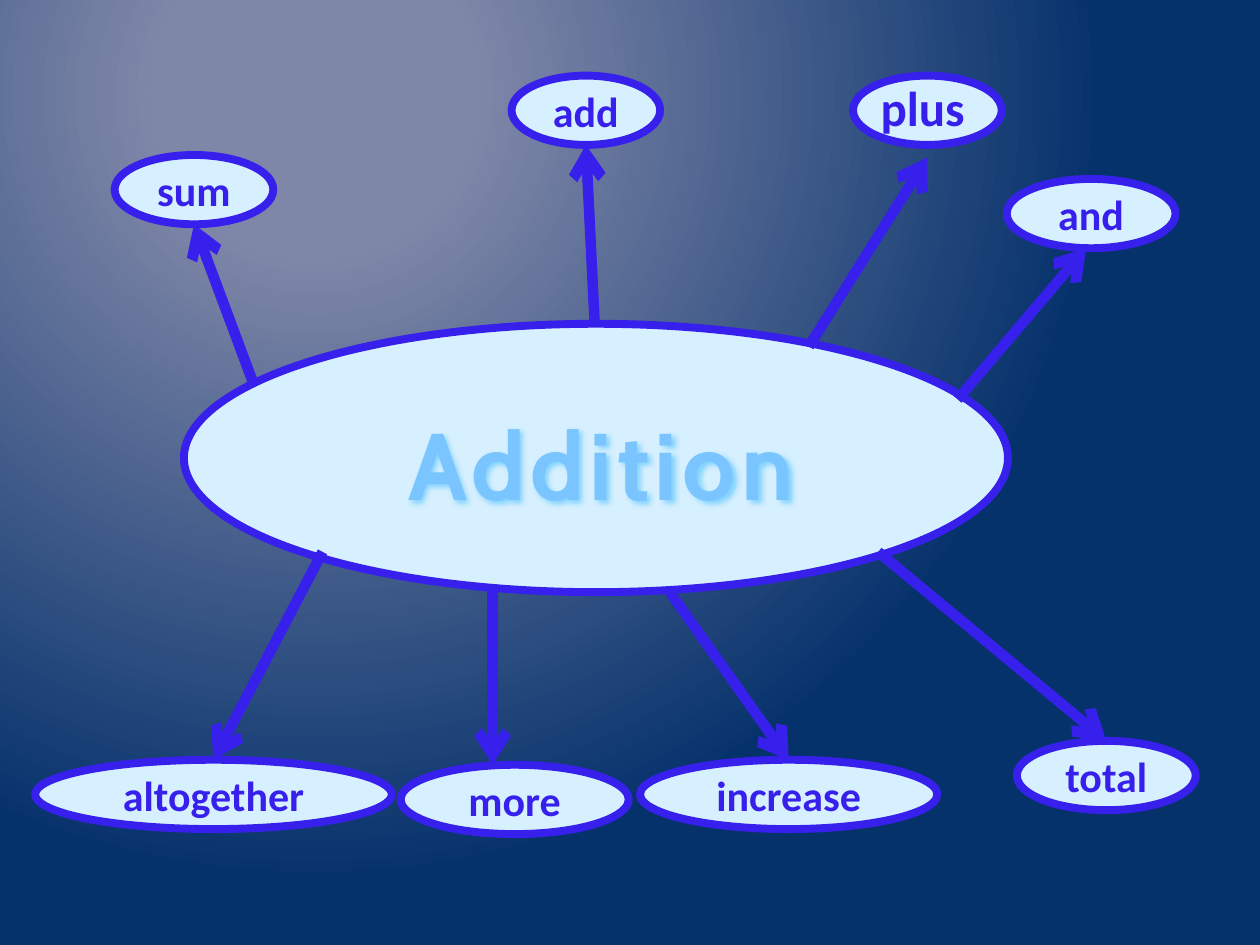
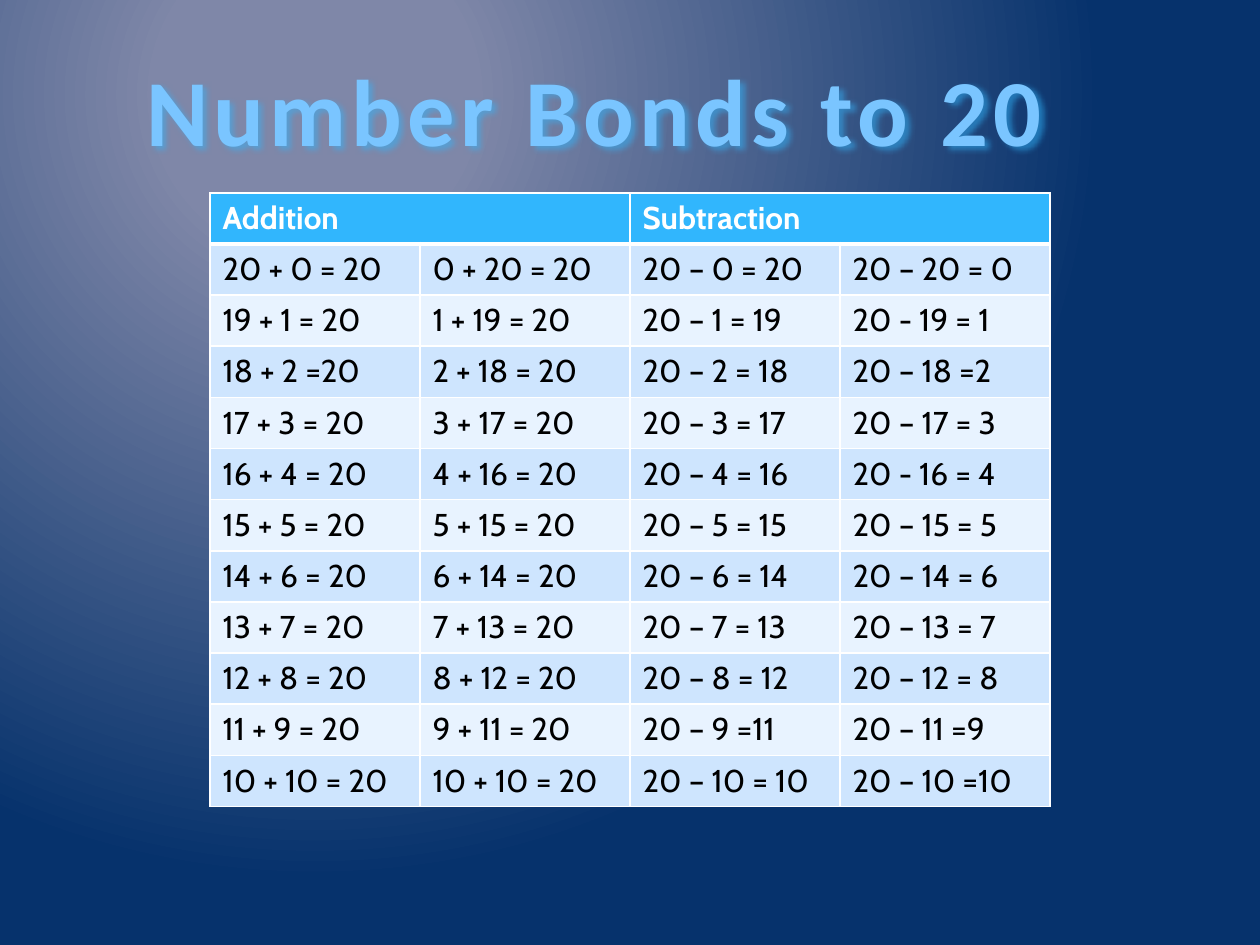
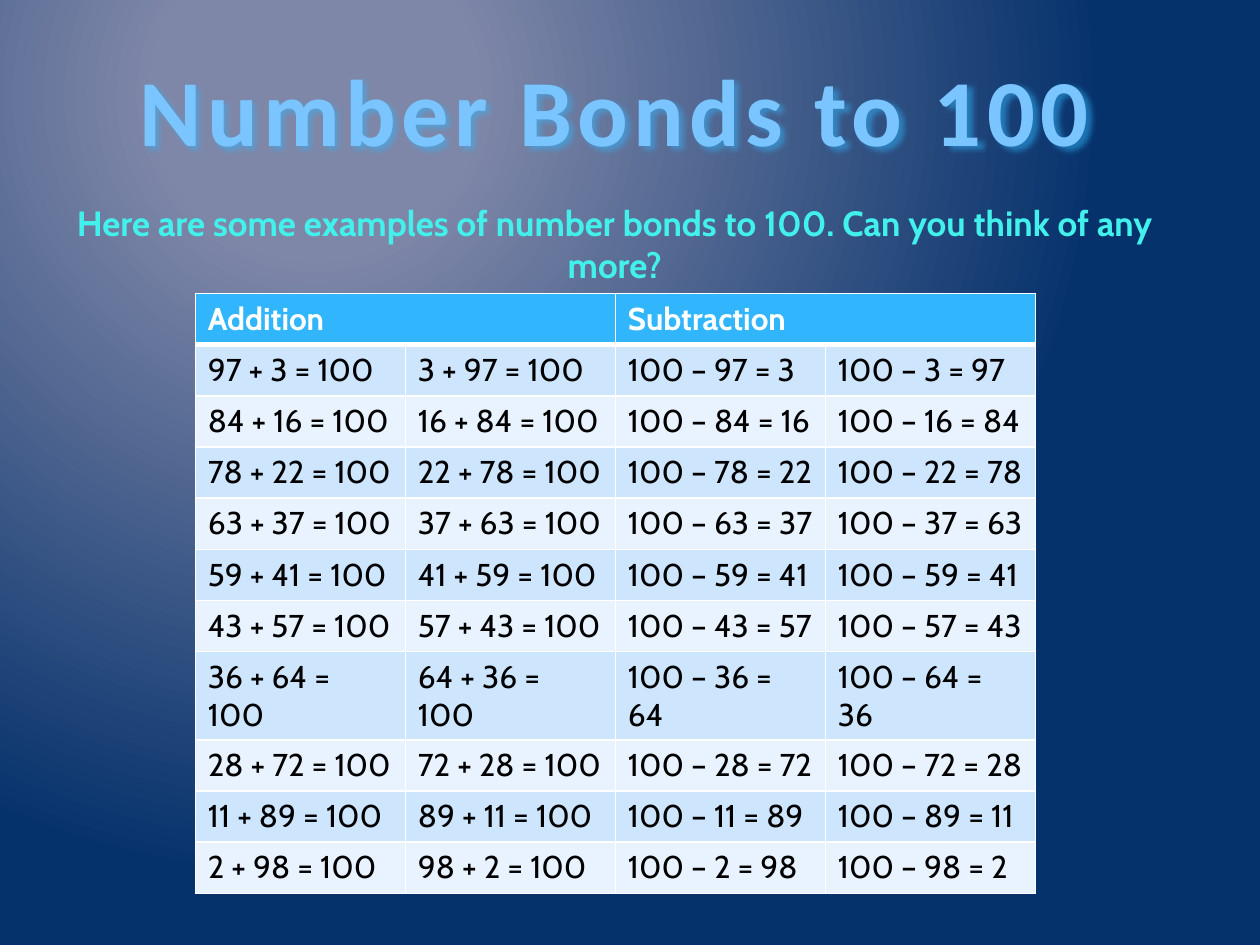
from dataclasses import dataclass
from typing import NamedTuple

from lxml.etree import SubElement
from pptx import Presentation
from pptx.dml.color import RGBColor
from pptx.enum.shapes import MSO_CONNECTOR as Connector
from pptx.enum.shapes import MSO_SHAPE as Preset
from pptx.enum.text import MSO_ANCHOR as Anchor
from pptx.enum.text import MSO_AUTO_SIZE as AutoSize
from pptx.enum.text import PP_ALIGN as Align
from pptx.oxml.ns import qn
from pptx.util import Inches, Pt

SLIDE_WIDTH, SLIDE_HEIGHT = Inches(10), Inches(7.5)
GRID_COLUMNS, GRID_ROWS = 100, 75

VIOLET = RGBColor(0x38, 0x20, 0xEC)
PALE_BLUE = RGBColor(0xD6, 0xF0, 0xFF)
WHITE = RGBColor(0xFF, 0xFF, 0xFF)
BLACK = RGBColor(0x00, 0x00, 0x00)
HEADER_BLUE = RGBColor(0x31, 0xB6, 0xFD)
BAND_DARK = RGBColor(0xCE, 0xE5, 0xFE)
BAND_LIGHT = RGBColor(0xE8, 0xF3, 0xFF)
HAZE = RGBColor(0x7F, 0x87, 0xA8)
NAVY = RGBColor(0x06, 0x32, 0x6C)
SKY = RGBColor(0x7A, 0xC5, 0xFF)
AZURE = RGBColor(0x00, 0x92, 0xDF)
HUB_OUTLINE = RGBColor(0x05, 0x2E, 0x65)
TITLE_OUTLINE = RGBColor(0x07, 0x3E, 0x87)
AQUA_PALE = RGBColor(0x50, 0xF1, 0xEB)
AQUA = RGBColor(0x42, 0xF1, 0xEB)
TEAL = RGBColor(0x00, 0xDA, 0xD5)

BACKGROUND_STOPS = [(20, HAZE), (100, NAVY)]
TITLE_STOPS = [(10, SKY), (75, AZURE)]
PROMPT_STOPS = [(0, AQUA_PALE), (25, AQUA), (50, TEAL), (75, AQUA), (100, AQUA_PALE)]

HEADING_FONT, BODY_FONT = "Calibri", "Cabin"
BUBBLE_HEIGHT = 5.5
CELL_WIDTH, CELL_HEIGHT = 16.67, 4.06


class Box(NamedTuple):
    left: float
    top: float
    width: float
    height: float

    def lengths(self):
        return (column(self.left), row(self.top), column(self.width), row(self.height))


@dataclass
class Bubble:
    word: str
    left: float
    top: float
    width: float
    arrow_start: tuple[float, float]
    tip_shift: float = 0
    tip_gap: float = 0

    @property
    def box(self) -> Box:
        return Box(self.left, self.top, self.width, BUBBLE_HEIGHT)

    @property
    def arrow_tip(self) -> tuple[float, float]:
        """The middle of the side that faces the hub, with any offset."""
        above_hub = self.top < HUB.top
        edge = self.top + BUBBLE_HEIGHT + self.tip_gap if above_hub else self.top
        return self.left + self.width / 2 + self.tip_shift, edge


@dataclass
class BondTable:
    total: int
    box: Box
    title_box: Box
    first_parts: list[int]
    takes_first_part_first: bool
    special_cells: dict[tuple[int, int], str]

    def rows(self) -> list[list[str]]:
        result = []
        for first in self.first_parts:
            second = self.total - first
            sums = [f"{a} + {b} = {self.total}" for a, b in ((first, second), (second, first))]
            differences = [f"{self.total} – {a} = {b}" for a, b in ((first, second), (second, first))]
            if not self.takes_first_part_first:
                differences.reverse()
            result.append(sums + differences)
        for (row_index, column_index), text in self.special_cells.items():
            result[row_index][column_index] = text
        return result


HUB = Box(14.6, 25.7, 65.4, 21.3)
HUB_TITLE = Box(28.7, 31.7, 38, 10.1)
PLUS_LABEL = Box(68.9, 5.7, 11.8, 5.7)
PROMPT = Box(2.3, 15.5, 93, 13.5)

BUBBLES = [
    Bubble("plus", 67.7, 6, 11.8, (64.2, 27.5), tip_gap=1),
    Bubble("sum", 9.1, 12.3, 12.6, (20.1, 30.4)),
    Bubble("total", 80.7, 58.8, 14.2, (69.7, 43.8)),
    Bubble("increase", 50.8, 60.3, 23.6, (53.1, 46.9)),
    Bubble("add", 40.6, 6, 11.8, (47.2, 25.7)),
    Bubble("altogether", 2.8, 60.3, 28.3, (25.6, 43.8)),
    Bubble("more", 31.8, 60.7, 18.1, (39.1, 46.6), tip_shift=-1.75),
    Bubble("and", 79.9, 14.2, 13.4, (76, 31.7), tip_shift=-0.4),
]

BONDS_TO_20 = BondTable(
    20, Box(16.67, 15.3, 66.67, 48.7), Box(3.5, 3.6, 87.4, 10.1),
    list(range(20, 9, -1)), False,
    {(1, 3): "20 - 19 = 1", (2, 0): "18 + 2 =20", (2, 3): "20 – 18 =2",
     (4, 3): "20 - 16 = 4", (9, 2): "20 – 9 =11", (9, 3): "20 – 11 =9",
     (10, 3): "20 – 10 =10"},
)
BONDS_TO_100 = BondTable(
    100, Box(15.5, 23.3, 66.67, 44.6), Box(3.5, 3.6, 90.6, 10.1),
    [97, 84, 78, 63, 59, 43, 36, 28, 11, 2], True,
    {(4, 3): "100 – 59 = 41"},
)


def column(count: float) -> int:
    return round(SLIDE_WIDTH * count / GRID_COLUMNS)


def row(count: float) -> int:
    return round(SLIDE_HEIGHT * count / GRID_ROWS)


def add_color(parent, color: RGBColor):
    return SubElement(parent, qn("a:srgbClr"), val=str(color))


def set_gradient(fill, owner, stops):
    """Turn fill, which lies within owner, into a downward gradient."""
    fill.gradient()
    gradient = owner.find(".//" + qn("a:gradFill"))
    stop_list = gradient.find(qn("a:gsLst"))
    for stop in list(stop_list):
        stop_list.remove(stop)
    for position, color in stops:
        add_color(SubElement(stop_list, qn("a:gs"), pos=str(position * 1000)), color)
    gradient.find(qn("a:lin")).set("ang", "5400000")
    return gradient


def paint_background(master):
    gradient = set_gradient(master.background.fill, master.element.cSld, BACKGROUND_STOPS)
    gradient.remove(gradient.find(qn("a:lin")))
    circle = SubElement(gradient, qn("a:path"), {"path": "circle"})
    SubElement(circle, qn("a:fillToRect"), l="50000", t="20000", r="100000", b="100000")


def add_run(paragraph, text: str, font_name: str, size: float, bold: bool = True, color=None):
    run = paragraph.add_run()
    run.text = text
    run.font.name, run.font.size, run.font.bold = font_name, Pt(size), bold
    if color is not None:
        run.font.color.rgb = color
    return run


def add_text_box(slide, box: Box, alignment=Align.LEFT):
    shape = slide.shapes.add_textbox(*box.lengths())
    shape.text_frame.word_wrap = True
    shape.text_frame.auto_size = AutoSize.SHAPE_TO_FIT_TEXT
    shape.text_frame.paragraphs[0].alignment = alignment
    return shape


def add_title(slide, text: str, box: Box, font_name: str, outline: RGBColor):
    shape = add_text_box(slide, box, Align.CENTER)
    run = add_run(shape.text_frame.paragraphs[0], text, font_name, 54)
    properties = run.font._element
    set_gradient(run.font.fill, properties, TITLE_STOPS)
    properties.set("spc", "300")
    line = SubElement(properties, qn("a:ln"), w=str(Pt(0.9)))
    add_color(SubElement(line, qn("a:solidFill")), outline)
    properties.insert(0, line)
    effects = SubElement(shape._element.spPr, qn("a:effectLst"))
    shadow = SubElement(effects, qn("a:outerShdw"), blurRad=str(Pt(3)), dist=str(Pt(2)),
                        dir="2700000", algn="tl", rotWithShape="0")
    SubElement(add_color(shadow, HEADER_BLUE), qn("a:alpha"), val="50000")


def add_ellipse(slide, box: Box):
    shape = slide.shapes.add_shape(Preset.OVAL, *box.lengths())
    shape.shadow.inherit = False
    shape.fill.solid()
    shape.fill.fore_color.rgb = PALE_BLUE
    shape.line.color.rgb, shape.line.width = VIOLET, Pt(4.5)
    return shape


def add_arrow(slide, start: tuple[float, float], tip: tuple[float, float]):
    arrow = slide.shapes.add_connector(
        Connector.STRAIGHT, column(start[0]), row(start[1]), column(tip[0]), row(tip[1]))
    arrow.line.color.rgb, arrow.line.width = VIOLET, Pt(6)
    SubElement(arrow.line._get_or_add_ln(), qn("a:tailEnd"), type="arrow")
    SubElement(arrow._element.spPr, qn("a:effectLst"))


def add_bubble(slide, bubble: Bubble):
    ellipse = add_ellipse(slide, bubble.box)
    if bubble.word == "plus":
        label, size = add_text_box(slide, PLUS_LABEL), 28
    else:
        label, size = ellipse, 24
        label.text_frame.vertical_anchor = Anchor.MIDDLE
        label.text_frame.paragraphs[0].alignment = Align.CENTER
    add_run(label.text_frame.paragraphs[0], bubble.word, HEADING_FONT, size, color=VIOLET)
    add_arrow(slide, bubble.arrow_start, bubble.arrow_tip)


def style_cell(cell, fill: RGBColor, top_width: float, bottom_width: float):
    properties = cell._tc.get_or_add_tcPr()
    for side, width in (("L", 1), ("R", 1), ("T", top_width), ("B", bottom_width)):
        line = SubElement(properties, qn(f"a:ln{side}"), w=str(Pt(width)))
        add_color(SubElement(line, qn("a:solidFill")), WHITE)
    cell.fill.solid()
    cell.fill.fore_color.rgb = fill


def add_bond_table(slide, bonds: BondTable):
    rows = [["Addition", "", "Subtraction", ""]] + bonds.rows()
    table = slide.shapes.add_table(len(rows), 4, *bonds.box.lengths()).table
    for table_column in table.columns:
        table_column.width = column(CELL_WIDTH)
    for row_index, texts in enumerate(rows):
        table.rows[row_index].height = row(CELL_HEIGHT)
        header = row_index == 0
        fill = HEADER_BLUE if header else (BAND_LIGHT, BAND_DARK)[row_index % 2]
        for column_index, text in enumerate(texts):
            cell = table.cell(row_index, column_index)
            style_cell(cell, fill, 3 if row_index == 1 else 1, 3 if header else 1)
            if text:
                add_run(cell.text_frame.paragraphs[0], text, BODY_FONT, 18,
                        header, WHITE if header else BLACK)
    for first in (0, 2):
        table.cell(0, first).merge(table.cell(0, first + 1))


def add_word_map(slide):
    add_ellipse(slide, HUB)
    for bubble in BUBBLES:
        add_bubble(slide, bubble)
    add_title(slide, "Addition", HUB_TITLE, BODY_FONT, HUB_OUTLINE)


def add_bonds(slide, bonds: BondTable):
    add_title(slide, f"Number Bonds to {bonds.total}", bonds.title_box, HEADING_FONT, TITLE_OUTLINE)
    add_bond_table(slide, bonds)


def add_prompt(slide):
    shape = add_text_box(slide, PROMPT, Align.CENTER)
    text = "Here are some examples of number bonds to 100. Can you think of any more?"
    run = add_run(shape.text_frame.paragraphs[0], text, BODY_FONT, 20)
    set_gradient(run.font.fill, run.font._element, PROMPT_STOPS)


def main():
    presentation = Presentation()
    presentation.slide_width, presentation.slide_height = SLIDE_WIDTH, SLIDE_HEIGHT
    paint_background(presentation.slide_master)
    blank = presentation.slide_layouts[6]
    word_map, twenty, hundred = (presentation.slides.add_slide(blank) for _ in range(3))
    add_word_map(word_map)
    add_bonds(twenty, BONDS_TO_20)
    add_bonds(hundred, BONDS_TO_100)
    add_prompt(hundred)
    presentation.save("out.pptx")


if __name__ == "__main__":
    main()
